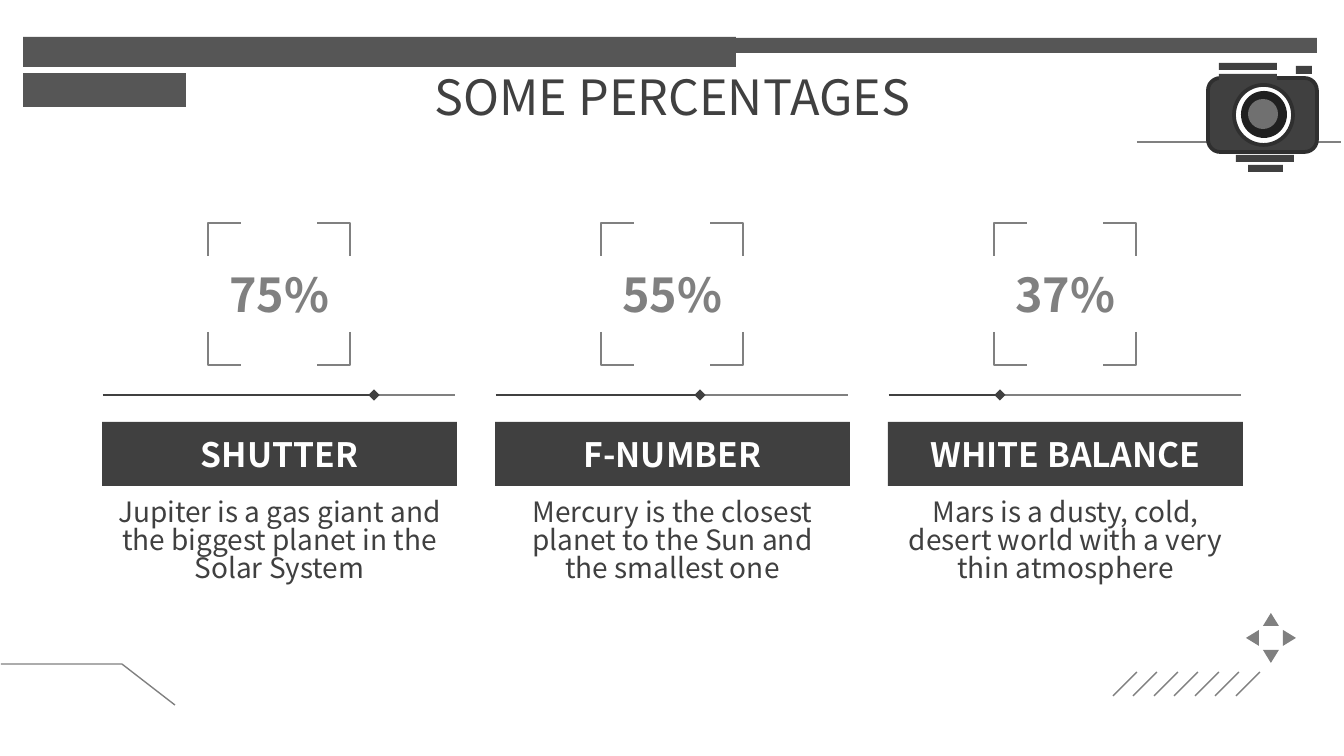
from dataclasses import dataclass

from lxml.etree import SubElement
from pptx import Presentation
from pptx.dml.color import RGBColor
from pptx.enum.shapes import MSO_CONNECTOR, MSO_SHAPE
from pptx.enum.text import MSO_ANCHOR, MSO_AUTO_SIZE, PP_ALIGN
from pptx.oxml.ns import qn
from pptx.shapes.base import BaseShape
from pptx.slide import Slide
from pptx.util import Emu, Inches, Pt

DARK = RGBColor(0x40, 0x40, 0x40)
GRAY = RGBColor(0x80, 0x80, 0x80)
BAR = RGBColor(0x56, 0x56, 0x56)
EDGE = RGBColor(0x2F, 0x2F, 0x2F)
LENS = RGBColor(0x20, 0x20, 0x20)
GLASS = RGBColor(0x70, 0x70, 0x70)
WHITE = RGBColor(0xFF, 0xFF, 0xFF)
FONT = "Noto Sans CJK KR"
EMU_PER_PX = 914400 / 134.4
COLUMN_LEFT, COLUMN_STEP, COLUMN_WIDTH = 102, 393, 355


@dataclass(frozen=True)
class Box:
    left: int
    top: int
    width: int
    height: int


@dataclass(frozen=True)
class Block:
    box: Box
    fill: RGBColor
    kind: MSO_SHAPE = MSO_SHAPE.RECTANGLE
    edge: RGBColor | None = None


@dataclass(frozen=True)
class TextStyle:
    size: int
    color: RGBColor
    bold: bool = False
    anchor: MSO_ANCHOR = MSO_ANCHOR.MIDDLE
    spacing: float = 1.0


@dataclass(frozen=True)
class Metric:
    percent: str
    heading: str
    description: str
    marker: int


TITLE_STYLE = TextStyle(26, DARK)
PERCENT_STYLE = TextStyle(25, GRAY, bold=True)
HEADING_STYLE = TextStyle(18, WHITE, bold=True)
DESCRIPTION_STYLE = TextStyle(15, DARK, anchor=MSO_ANCHOR.TOP, spacing=0.84)

METRICS = [
    Metric("75%", "SHUTTER",
           "Jupiter is a gas giant and the biggest planet in the Solar System", 272),
    Metric("55%", "F-NUMBER",
           "Mercury is the closest planet to the Sun and the smallest one", 205),
    Metric("37%", "WHITE BALANCE",
           "Mars is a dusty, cold, desert world with a very thin atmosphere", 112),
]

HEADER = [
    Block(Box(605, 38, 712, 15), BAR),
    Block(Box(1208, 78, 109, 74), DARK, MSO_SHAPE.ROUNDED_RECTANGLE, EDGE),
    Block(Box(1234, 85, 59, 60), WHITE, MSO_SHAPE.OVAL, EDGE),
    Block(Box(1241, 91, 46, 47), LENS, MSO_SHAPE.OVAL),
    Block(Box(1248, 99, 30, 30), GLASS, MSO_SHAPE.OVAL),
    Block(Box(1296, 66, 16, 8), DARK),
    Block(Box(1219, 74, 58, 7), DARK),
    Block(Box(1219, 63, 58, 7), DARK),
    Block(Box(1236, 155, 58, 7), DARK),
    Block(Box(1248, 165, 35, 7), DARK),
    Block(Box(23, 37, 713, 30), BAR),
    Block(Box(23, 73, 163, 34), BAR),
]


def px(length: int) -> Emu:
    return Emu(round(length * EMU_PER_PX))


def place(box: Box) -> tuple[Emu, Emu, Emu, Emu]:
    return px(box.left), px(box.top), px(box.width), px(box.height)


def write_text(shape: BaseShape, text: str, style: TextStyle) -> None:
    frame = shape.text_frame
    frame.word_wrap = True
    frame.auto_size = MSO_AUTO_SIZE.NONE
    frame.vertical_anchor = style.anchor
    frame.margin_left = frame.margin_right = Inches(0.1)
    frame.margin_top = frame.margin_bottom = Inches(0.1)
    paragraph = frame.paragraphs[0]
    paragraph.alignment = PP_ALIGN.CENTER
    paragraph.line_spacing = style.spacing
    run = paragraph.add_run()
    run.text = text
    run.font.name = FONT
    run.font.size = Pt(style.size)
    run.font.bold = style.bold
    run.font.color.rgb = style.color


def add_title(slide: Slide, text: str) -> None:
    title = slide.shapes.title
    title.left, title.top, title.width, title.height = place(Box(112, 54, 1121, 85))
    write_text(title, text, TITLE_STYLE)


def add_text(slide: Slide, box: Box, text: str, style: TextStyle) -> None:
    write_text(slide.shapes.add_textbox(*place(box)), text, style)


def add_block(slide: Slide, block: Block) -> BaseShape:
    shape = slide.shapes.add_shape(block.kind, *place(block.box))
    shape.shadow.inherit = False
    shape.fill.solid()
    shape.fill.fore_color.rgb = block.fill
    if block.edge is None:
        shape.line.fill.background()
    else:
        shape.line.color.rgb = block.edge
        shape.line.width = Pt(2)
    return shape


def add_line(slide: Slide, start: tuple[int, int], end: tuple[int, int],
             color: RGBColor = GRAY, width: float = 0.75, diamond: bool = False) -> None:
    connector = slide.shapes.add_connector(
        MSO_CONNECTOR.STRAIGHT, *map(px, start), *map(px, end))
    connector.line.color.rgb = color
    connector.line.width = Pt(width)
    properties = connector.element.spPr
    if diamond:
        SubElement(properties.find(qn("a:ln")), qn("a:tailEnd"), type="diamond")
    SubElement(properties, qn("a:effectLst"))


def add_outline(slide: Slide, points: list[tuple[int, int]], filled: bool = False) -> None:
    start, *others = [(px(x), px(y)) for x, y in points]
    builder = slide.shapes.build_freeform(*start)
    builder.add_line_segments(others, close=filled)
    shape = builder.convert_to_shape()
    shape.shadow.inherit = False
    if filled:
        shape.fill.solid()
        shape.fill.fore_color.rgb = GRAY
        shape.line.fill.background()
    else:
        shape.fill.background()
        shape.line.color.rgb = GRAY
        shape.line.width = Pt(0.75)


def add_direction_pad(slide: Slide, x: int, y: int) -> None:
    for dx, dy in [(-1, 0), (1, 0), (0, 1), (0, -1)]:
        tip = (x + 25 * dx, y + 25 * dy)
        base = [(x + 12 * dx + 8 * side * dy, y + 12 * dy + 8 * side * dx)
                for side in (-1, 1)]
        add_outline(slide, [tip, *base], filled=True)


def add_focus_frame(slide: Slide, left: int, top: int, size: int, arm: int) -> None:
    for x, inward_x in [(left, arm), (left + size, -arm)]:
        for y, inward_y in [(top, arm), (top + size, -arm)]:
            add_outline(slide, [(x, y + inward_y), (x, y), (x + inward_x, y)])


def add_metric(slide: Slide, metric: Metric, left: int) -> None:
    add_focus_frame(slide, left + 106, 223, 142, 33)
    add_text(slide, Box(left + 106, 255, 142, 78), metric.percent, PERCENT_STYLE)
    add_line(slide, (left + 1, 395), (left + 353, 395))
    add_line(slide, (left + 1, 395), (left + metric.marker, 395), DARK, 1.5, diamond=True)
    heading = add_block(slide, Block(Box(left, 422, COLUMN_WIDTH, 64), DARK))
    write_text(heading, metric.heading, HEADING_STYLE)
    add_text(slide, Box(left, 486, COLUMN_WIDTH, 128), metric.description, DESCRIPTION_STYLE)


def main() -> None:
    presentation = Presentation()
    presentation.slide_width, presentation.slide_height = px(1344), px(756)
    slide = presentation.slides.add_slide(presentation.slide_layouts[5])
    add_title(slide, "SOME PERCENTAGES")
    add_direction_pad(slide, 1271, 638)
    add_outline(slide, [(175, 705), (122, 664), (1, 664)])
    for index in range(7):
        left = 1113 + index * 123 // 6
        add_line(slide, (left, 696), (left + 24, 672))
    add_line(slide, (1137, 142), (1341, 142))
    for index, metric in enumerate(METRICS):
        add_metric(slide, metric, COLUMN_LEFT + index * COLUMN_STEP)
    for block in HEADER:
        add_block(slide, block)
    presentation.save("out.pptx")


if __name__ == "__main__":
    main()
